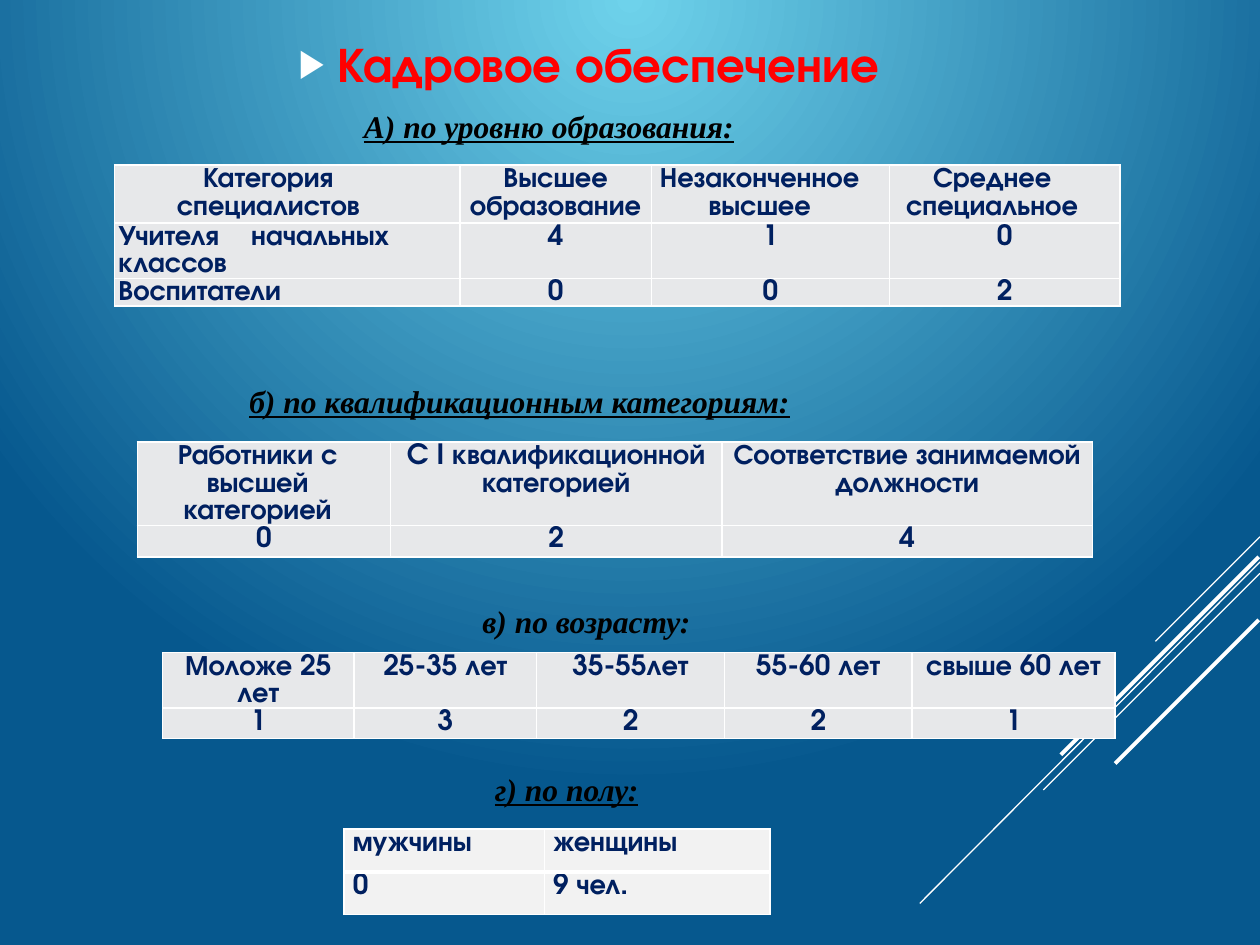
from lxml import etree
from pptx import Presentation
from pptx.dml.color import RGBColor
from pptx.enum.shapes import MSO_CONNECTOR
from pptx.enum.text import MSO_ANCHOR, MSO_AUTO_SIZE, PP_ALIGN
from pptx.oxml.ns import qn
from pptx.util import Inches, Pt

WHITE = RGBColor(0xFF, 0xFF, 0xFF)
BLACK = RGBColor(0, 0, 0)
RED = RGBColor(0xFF, 0, 0)
NAVY = RGBColor(0x00, 0x20, 0x60)
CELL_GREY = RGBColor(0xE7, 0xE8, 0xEA)
PALE_GREY = RGBColor(0xF2, 0xF2, 0xF2)
GLOW_BLUE = RGBColor(0x6E, 0xD2, 0xEB)
DEEP_BLUE = RGBColor(0x06, 0x58, 0x8E)
SANS = "TeX Gyre Adventor"
SERIF = "Times New Roman"

CENTER, JUSTIFY = PP_ALIGN.CENTER, PP_ALIGN.JUSTIFY

# Start, end, width in points
DECOR_LINES = [
    ((10, 4.26), (9.17, 5.09), 0.75),
    ((10, 4.46), (7.3, 7.17), 0.75),
    ((10, 4.55), (8.28, 6.27), 0.75),
    ((9.99, 4.42), (8.42, 5.99), 2.25),
    ((9.99, 4.92), (8.85, 6.06), 2.25),
]

# Text, left, top, width, underline
HEADINGS = [
    ("А) по уровню образования:", 2.79, 0.78, 3.15, True),
    ("б) по квалификационным категориям:", 1.88, 2.96, 4.58, True),
    ("в) по возрасту:", 3.73, 4.71, 1.89, False),
    ("г) по полу:", 3.83, 6.04, 1.35, True),
]

EDUCATION = [
    ["Категория специалистов", "Высшее образование", "Незаконченное высшее",
     "Среднее специальное"],
    ["Учителя начальных классов", "4", "1", "0"],
    ["Воспитатели", "0", "0", "2"],
]
QUALIFICATION = [
    ["Работники с высшей категорией", "C I квалификационной категорией",
     "Соответствие занимаемой должности"],
    ["0", "2", "4"],
]
AGE = [
    ["Моложе 25 лет", "25-35 лет", "35-55лет", "55-60 лет", "свыше 60 лет"],
    ["1", "3", "2", "2", "1"],
]
GENDER = [["мужчины", "женщины"], ["0", "9 чел."]]


def paint_background(slide):
    """Fill the slide with a circular gradient centred on its top edge."""
    fill = slide.background.fill
    fill.gradient()
    for stop, color in zip(fill.gradient_stops, (GLOW_BLUE, DEEP_BLUE)):
        stop.color.rgb = color
    gradient = slide.background._cSld.find(".//" + qn("a:gradFill"))
    gradient.remove(gradient.find(qn("a:lin")))
    circle = etree.SubElement(gradient, qn("a:path"), path="circle")
    etree.SubElement(circle, qn("a:fillToRect"), l="50000", r="50000", b="100000")


def add_line(slide, start, end, width):
    line = slide.shapes.add_connector(
        MSO_CONNECTOR.STRAIGHT, *map(Inches, (*start, *end)))
    line.line.color.rgb = WHITE
    line.line.width = Pt(width)
    etree.SubElement(line._element.spPr, qn("a:effectLst"))


def write(frame, text, *, size=16, font=SANS, color=NAVY, align=CENTER,
          spacing=1.07, italic=False, underline=False):
    paragraph = frame.paragraphs[0]
    paragraph.alignment = align
    paragraph.line_spacing = spacing
    run = paragraph.add_run()
    run.text = text
    run.font.size = Pt(size)
    run.font.name = font
    run.font.color.rgb = color
    run.font.bold = True
    run.font.italic = italic
    run.font.underline = underline
    return paragraph


def add_bullet(paragraph, symbol, color, percent, indent):
    properties = paragraph._p.get_or_add_pPr()
    properties.set("marL", str(indent))
    properties.set("indent", str(-indent))
    bullet_color = etree.SubElement(properties, qn("a:buClr"))
    etree.SubElement(bullet_color, qn("a:srgbClr"), val=str(color))
    etree.SubElement(properties, qn("a:buSzPct"), val=str(percent * 1000))
    etree.SubElement(properties, qn("a:buFont"), typeface="Arial")
    etree.SubElement(properties, qn("a:buChar"), char=symbol)


def add_title(slide, text):
    title = slide.shapes.title
    title.left, title.top, title.width, title.height = map(
        Inches, (1.09, 0.24, 7.17, 0.52))
    frame = title.text_frame
    frame.auto_size = MSO_AUTO_SIZE.NONE
    frame.vertical_anchor = MSO_ANCHOR.MIDDLE
    paragraph = write(frame, text, size=28, color=RED, spacing=1.0)
    add_bullet(paragraph, "▶", WHITE, 80, Inches(0.31))


def add_heading(slide, text, left, top, width, underline):
    box = slide.shapes.add_textbox(*map(Inches, (left, top, width, 0.41)))
    box.text_frame.word_wrap = False
    write(box.text_frame, text, size=18, font=SERIF, color=BLACK,
          align=JUSTIFY, italic=True, underline=underline)


def set_borders(cell, widths):
    """Draw white borders, widths in points: left, right, top, bottom."""
    properties = cell._tc.get_or_add_tcPr()
    for position, (side, width) in enumerate(zip("LRTB", widths)):
        border = etree.Element(qn(f"a:ln{side}"), w=str(Pt(width)))
        solid = etree.SubElement(border, qn("a:solidFill"))
        etree.SubElement(solid, qn("a:srgbClr"), val=str(WHITE))
        properties.insert(position, border)


def add_grid(slide, rows, left, top, columns, heights, *, fill=CELL_GREY,
             margin=0.03, label_align=CENTER, divider=1, right_margins=None):
    """Add a table; right_margins maps (row, column) to a wider right inset,
    label_align is used in the first column below the header."""
    table = slide.shapes.add_table(
        len(rows), len(columns), Inches(left), Inches(top),
        Inches(sum(columns)), Inches(sum(heights))).table
    for column, width in zip(table.columns, columns):
        column.width = Inches(width)
    for row, height in zip(table.rows, heights):
        row.height = Inches(height)
    for r, texts in enumerate(rows):
        for c, text in enumerate(texts):
            cell = table.cell(r, c)
            cell.margin_left = Inches(margin)
            cell.margin_right = Inches((right_margins or {}).get((r, c), margin))
            cell.margin_top = cell.margin_bottom = 0
            cell.fill.solid()
            cell.fill.fore_color.rgb = fill
            set_borders(cell, (1, 1, divider if r else 1,
                               1 if r == len(rows) - 1 else divider))
            labelled = fill == PALE_GREY or (r and c == 0)
            write(cell.text_frame, text, align=label_align if labelled else CENTER)


def main():
    presentation = Presentation()
    presentation.slide_width, presentation.slide_height = Inches(10), Inches(7.5)
    slide = presentation.slides.add_slide(presentation.slide_layouts[5])
    paint_background(slide)
    for decor_line in DECOR_LINES:
        add_line(slide, *decor_line)
    add_title(slide, "Кадровое обеспечение")
    add_grid(slide, EDUCATION, 0.91, 1.31, [2.74, 1.52, 1.89, 1.83],
             [0.46, 0.44, 0.22], label_align=JUSTIFY,
             right_margins={(0, 0): 0.33, (1, 0): 0.56, (0, 2): 0.2, (0, 3): 0.23})
    add_grid(slide, QUALIFICATION, 1.09, 3.51, [2.01, 2.63, 2.94],
             [0.66, 0.25], right_margins={(0, 0): 0.13})
    add_grid(slide, AGE, 1.29, 5.18, [1.52, 1.45, 1.49, 1.49, 1.61], [0.44, 0.24])
    add_grid(slide, GENDER, 2.73, 6.58, [1.59, 1.79], [0.34, 0.34],
             fill=PALE_GREY, margin=0.07, label_align=JUSTIFY, divider=3)
    for heading in HEADINGS:
        add_heading(slide, *heading)
    presentation.save("out.pptx")


if __name__ == "__main__":
    main()
